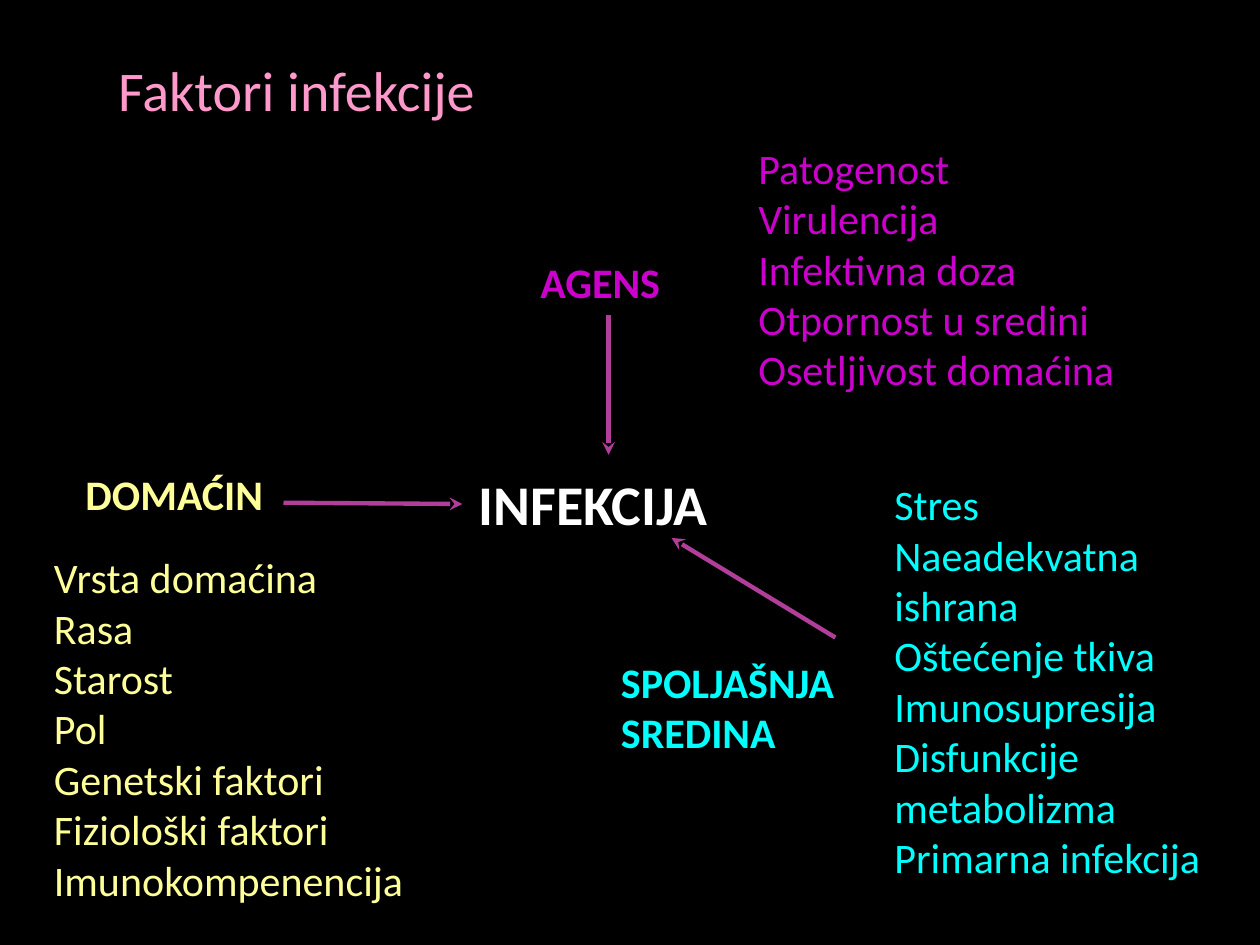
from lxml.etree import SubElement
from pptx import Presentation
from pptx.dml.color import RGBColor
from pptx.enum.shapes import MSO_CONNECTOR as CONNECTOR
from pptx.enum.text import MSO_ANCHOR as ANCHOR, MSO_AUTO_SIZE as AUTO_SIZE
from pptx.oxml.ns import qn
from pptx.util import Inches, Pt

FONT = "Calibri"
BLACK = RGBColor(0x00, 0x00, 0x00)
WHITE = RGBColor(0xFF, 0xFF, 0xFF)
PINK = RGBColor(0xFF, 0x99, 0xCC)
MAGENTA = RGBColor(0xCC, 0x00, 0xCC)
YELLOW = RGBColor(0xFF, 0xFF, 0x99)
CYAN = RGBColor(0x00, 0xFF, 0xFF)
ARROW = RGBColor(0xB1, 0x3F, 0x9A)

AGENT_FACTORS = [
    "Patogenost\vVirulencija", "Infektivna doza", "Otpornost u sredini",
    "Osetljivost domaćina",
]
HOST_FACTORS = [
    "Vrsta domaćina", "Rasa", "Starost", "Pol", "Genetski faktori",
    "Fiziološki faktori", "Imunokompenencija",
]
ENVIRONMENT_FACTORS = [
    "Stres", "Naeadekvatna ishrana", "Oštećenje tkiva", "Imunosupresija",
    "Disfunkcije metabolizma", "Primarna infekcija",
]


def add_text(s, lines, left, top, width, height, *, color, size=24,
             bold=False, wrap=True, anchor=ANCHOR.TOP):
    """Add a text box with one paragraph per line; a vertical tab breaks a line."""
    box = s.shapes.add_textbox(Inches(left), Inches(top),
                               Inches(width), Inches(height))
    tf = box.text_frame
    tf.word_wrap = wrap
    tf.auto_size = AUTO_SIZE.NONE
    tf.vertical_anchor = anchor
    tf.text = "\n".join(lines)
    for p in tf.paragraphs:
        for r in p.runs:
            r.font.name = FONT
            r.font.size = Pt(size)
            r.font.bold = bold
            r.font.color.rgb = color


def add_arrow(s, start, end):
    line = s.shapes.add_connector(CONNECTOR.STRAIGHT,
                                  *map(Inches, start), *map(Inches, end))
    line.line.color.rgb = ARROW
    line.line.width = Pt(2.5)
    SubElement(line.line._get_or_add_ln(), qn("a:tailEnd"), type="stealth")
    SubElement(line._element.spPr, qn("a:effectLst"))


def main():
    prs = Presentation()
    prs.slide_width, prs.slide_height = Inches(10), Inches(7.5)
    s = prs.slides.add_slide(prs.slide_layouts[6])
    s.background.fill.solid()
    s.background.fill.fore_color.rgb = BLACK

    add_text(s, ["AGENS"], 4.19, 1.99, 1.21, 0.51,
             color=MAGENTA, bold=True, wrap=False)
    add_text(s, AGENT_FACTORS, 5.92, 1.08, 3.5, 2.12, color=MAGENTA)

    add_text(s, ["DOMAĆIN"], 0.58, 3.67, 1.83, 0.51, color=YELLOW, bold=True)
    add_text(s, HOST_FACTORS, 0.33, 4.33, 3.5, 2.93, color=YELLOW)

    add_text(s, ["SPOLJAŠNJA", "SREDINA"], 4.83, 5.16, 2.06, 0.91,
             color=CYAN, bold=True, wrap=False)
    add_text(s, ENVIRONMENT_FACTORS, 7, 3.75, 2.67, 3.34, color=CYAN)

    add_arrow(s, (4.83, 2.5), (4.83, 3.61))
    add_arrow(s, (2.25, 3.99), (3.67, 4))
    add_arrow(s, (6.63, 5.06), (5.33, 4.27))

    add_text(s, ["Faktori infekcije"], 0.84, 0.25, 4.57, 0.92,
             color=PINK, size=32, anchor=ANCHOR.MIDDLE)
    add_text(s, ["INFEKCIJA"], 3.7, 3.68, 2.58, 0.64,
             color=WHITE, size=32, bold=True)

    prs.save("out.pptx")


if __name__ == "__main__":
    main()
